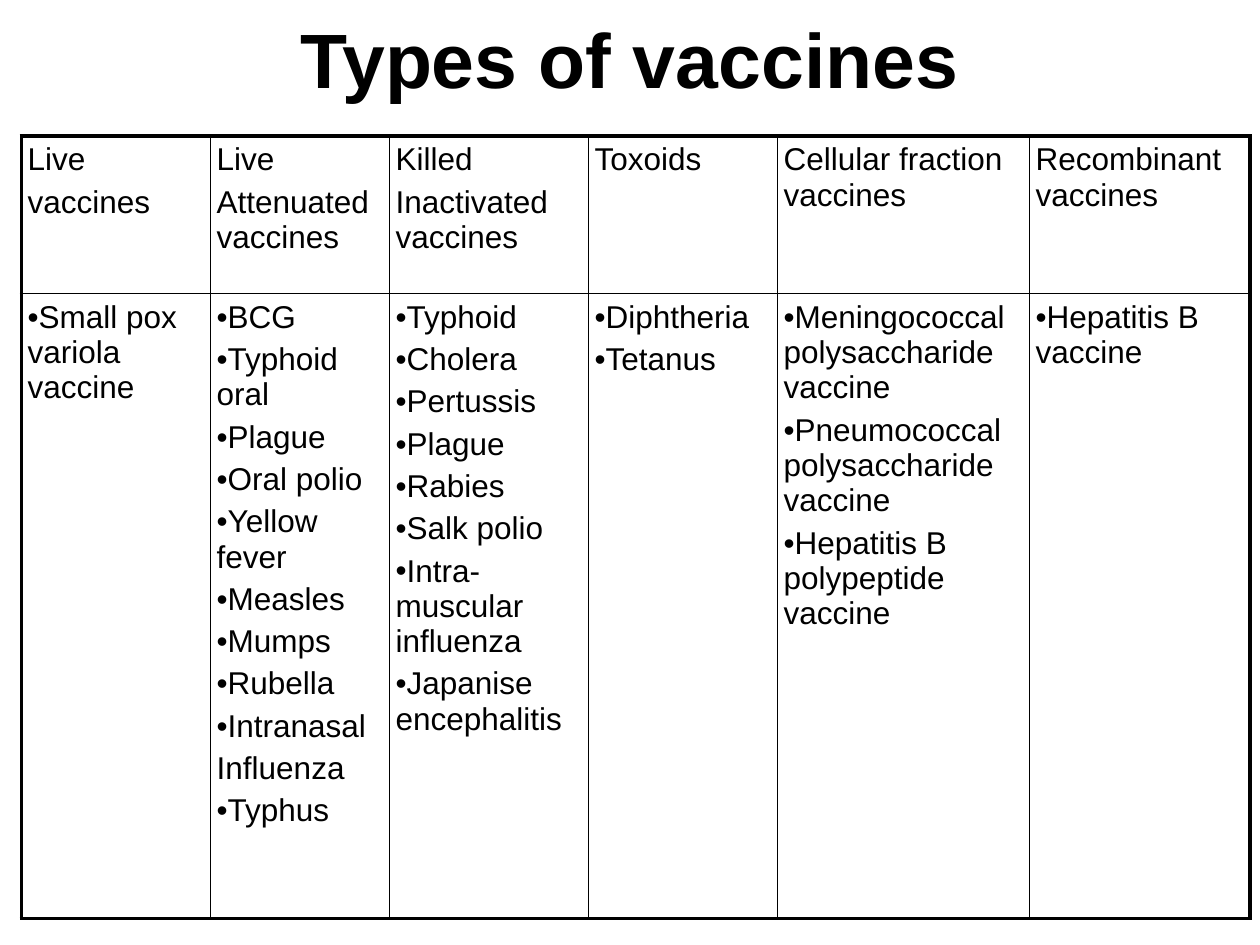
from dataclasses import dataclass

from lxml import etree
from pptx import Presentation
from pptx import util as u
from pptx.dml.color import RGBColor
from pptx.enum import text
from pptx.oxml import ns


@dataclass(frozen=True)
class Theme:
    font: str = "Arial"
    ink: str = "000000"
    paper: str = "FFFFFF"
    title_size: float = 44
    body_size: float = 18
    space_before: float = 4
    inset: float = 0.05
    outer_line: float = 2.25
    inner_line: float = 1


@dataclass(frozen=True)
class VaccineType:
    width: float
    heading: tuple[str, ...]
    examples: tuple[str, ...]


THEME = Theme()
ROW_HEIGHTS = (1.25, 4.96)
CONTINUATIONS = {"Influenza"}  # second line of "Intranasal", so no bullet
VACCINE_TYPES = (
    VaccineType(1.5, ("Live", "vaccines"), ("Small pox variola vaccine",)),
    VaccineType(1.42, ("Live", "Attenuated vaccines"),
                ("BCG", "Typhoid oral", "Plague", "Oral polio", "Yellow fever", "Measles",
                 "Mumps", "Rubella", "Intranasal", "Influenza", "Typhus")),
    VaccineType(1.58, ("Killed", "Inactivated vaccines"),
                ("Typhoid", "Cholera", "Pertussis", "Plague", "Rabies", "Salk polio",
                 "Intra-muscular influenza", "Japanise encephalitis")),
    VaccineType(1.5, ("Toxoids",), ("Diphtheria", "Tetanus")),
    VaccineType(2, ("Cellular fraction vaccines",),
                ("Meningococcal polysaccharide vaccine",
                 "Pneumococcal polysaccharide vaccine",
                 "Hepatitis B polypeptide vaccine")),
    VaccineType(1.75, ("Recombinant vaccines",), ("Hepatitis B vaccine",)),
)


def add_bullet(p) -> None:
    pPr = p._p.get_or_add_pPr()
    pPr.set("marL", "0")
    pPr.set("indent", "0")
    color = etree.SubElement(pPr, ns.qn("a:buClr"))
    etree.SubElement(color, ns.qn("a:srgbClr"), val=THEME.ink)
    etree.SubElement(pPr, ns.qn("a:buFont"), typeface=THEME.font)
    etree.SubElement(pPr, ns.qn("a:buChar"), char="•")


def write(p, words: str, *, size: float, bold: bool = False, bullet: bool = False,
          before: float = 0, align=text.PP_ALIGN.LEFT) -> None:
    p.alignment = align
    p.space_before = u.Pt(before)
    if bullet:
        add_bullet(p)
    r = p.add_run()
    r.text = words
    r.font.name = THEME.font
    r.font.size = u.Pt(size)
    r.font.bold = bold
    r.font.color.rgb = RGBColor.from_string(THEME.ink)


def set_margins(box) -> None:
    box.margin_left = box.margin_right = u.Inches(THEME.inset)
    box.margin_top = box.margin_bottom = u.Inches(THEME.inset)


def set_borders(cell, outer: dict[str, bool]) -> None:
    """Draw each side of the cell, heavier where it lies on the table's edge."""
    tcPr = cell._tc.get_or_add_tcPr()
    for side, is_outer in outer.items():
        width = u.Pt(THEME.outer_line if is_outer else THEME.inner_line)
        ln = etree.SubElement(tcPr, ns.qn(f"a:ln{side}"), w=str(int(width)))
        fill = etree.SubElement(ln, ns.qn("a:solidFill"))
        etree.SubElement(fill, ns.qn("a:srgbClr"), val=THEME.ink)


def fill_cell(cell, lines: tuple[str, ...], *, bulleted: bool) -> None:
    cell.fill.solid()
    cell.fill.fore_color.rgb = RGBColor.from_string(THEME.paper)
    cell.vertical_anchor = text.MSO_ANCHOR.TOP
    set_margins(cell)
    tf = cell.text_frame
    for i, line in enumerate(lines):
        p = tf.add_paragraph() if i else tf.paragraphs[0]
        write(p, line, size=THEME.body_size, before=THEME.space_before,
              bullet=bulleted and line not in CONTINUATIONS)


def add_title(s, words: str) -> None:
    sp = s.shapes.title
    sp.left, sp.top = u.Inches(0.5), u.Inches(-0.17)
    sp.width, sp.height = u.Inches(9), u.Inches(1.25)
    tf = sp.text_frame
    tf.word_wrap = True
    tf.vertical_anchor = text.MSO_ANCHOR.MIDDLE
    set_margins(tf)
    write(tf.paragraphs[0], words, size=THEME.title_size, bold=True,
          align=text.PP_ALIGN.CENTER)


def add_vaccine_table(s) -> None:
    n_rows, n_cols = len(ROW_HEIGHTS), len(VACCINE_TYPES)
    table = s.shapes.add_table(
        n_rows, n_cols, u.Inches(0.17), u.Inches(1.08),
        u.Inches(sum(v.width for v in VACCINE_TYPES)), u.Inches(sum(ROW_HEIGHTS))).table
    table.first_row = table.horz_banding = False
    for row, height in zip(table.rows, ROW_HEIGHTS):
        row.height = u.Inches(height)
    for c, vaccine in enumerate(VACCINE_TYPES):
        table.columns[c].width = u.Inches(vaccine.width)
        for r, lines in enumerate((vaccine.heading, vaccine.examples)):
            cell = table.cell(r, c)
            set_borders(cell, {"L": c == 0, "R": c == n_cols - 1,
                               "T": r == 0, "B": r == n_rows - 1})
            fill_cell(cell, lines, bulleted=r > 0)


def main() -> None:
    prs = Presentation()
    prs.slide_width, prs.slide_height = u.Inches(10), u.Inches(7.5)
    s = prs.slides.add_slide(prs.slide_layouts[5])
    add_title(s, "Types of vaccines")
    add_vaccine_table(s)
    prs.save("out.pptx")


if __name__ == "__main__":
    main()
